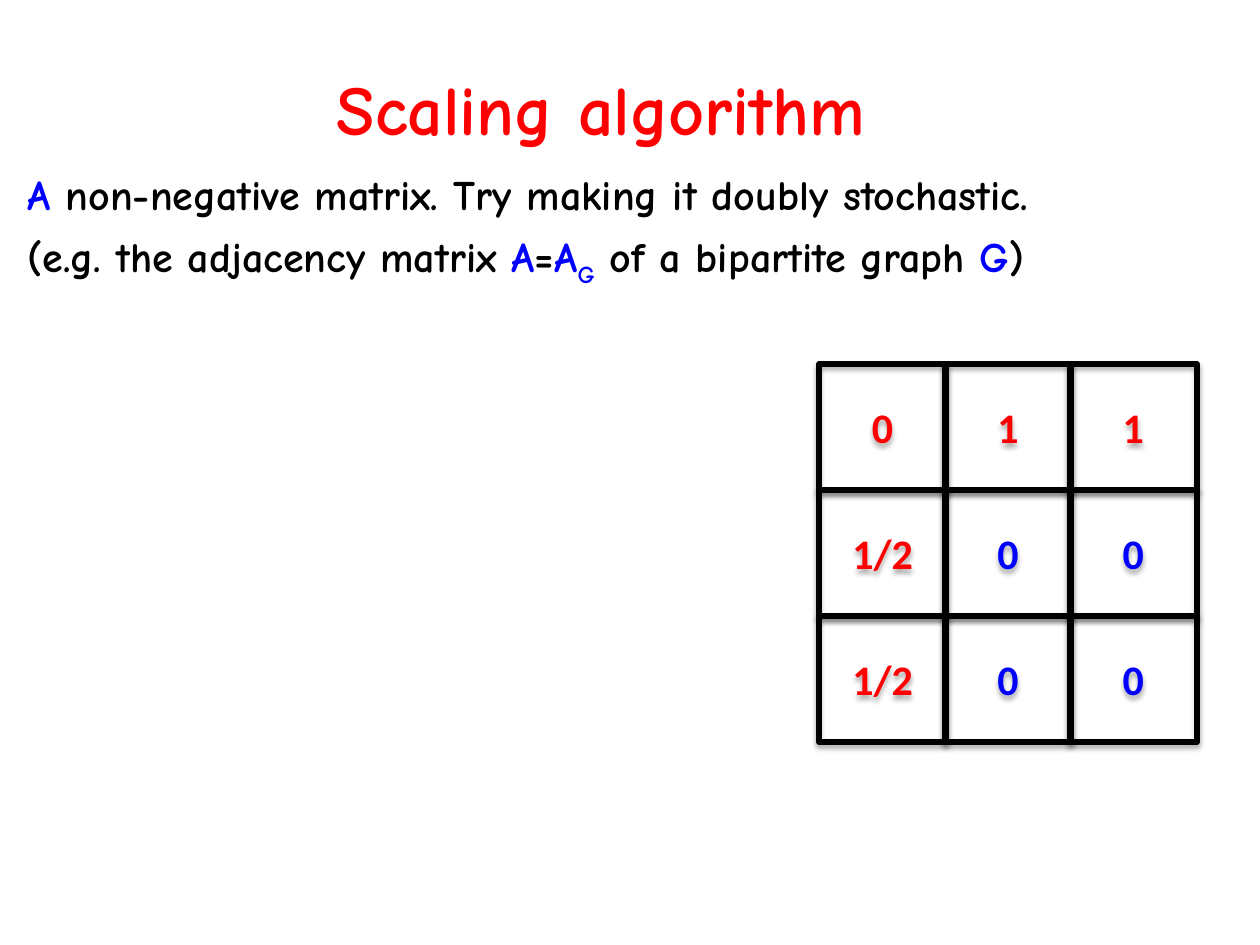
from pptx import Presentation
from pptx.dml.color import RGBColor
from pptx.enum.shapes import MSO_SHAPE
from pptx.enum.text import MSO_ANCHOR, PP_ALIGN
from pptx.util import Inches, Pt

COLORS = {"red": "FF0000", "blue": "0000FF", "black": "000000"}
TEXT_FONT, CELL_FONT = "Comic Neue", "Calibri"
GRID_LEFT, GRID_TOP, COL_STEP, ROW_STEP = 6.5, 2.89, 0.995, 1
CELL_W, CELL_H = 1.01, 1

MATRIX = [
    [("0", "red"), ("1", "red"), ("1", "red")],
    [("1/2", "red"), ("0", "blue"), ("0", "blue")],
    [("1/2", "red"), ("0", "blue"), ("0", "blue")],
]
TITLE = [[("Scaling algorithm ", "red")]]
BODY = [
    [("A", "blue"), (" non-negative matrix. Try making it doubly stochastic.", "black")],
    [("(e.g. the adjacency matrix ", "black"), ("A", "blue"), ("=", "black"),
     ("A", "blue"), ("G", "blue", "-25000"), (" of a bipartite graph ", "black"),
     ("G", "blue"), (")", "black")],
]


def color(name):
    """Return the named palette colour."""
    return RGBColor.from_string(COLORS[name])


def style_run(r, font, size, name):
    """Format a run as bold text in the given font, size and colour."""
    r.font.name, r.font.size, r.font.bold = font, Pt(size), True
    r.font.color.rgb = color(name)


def add_run(p, size, text, name, baseline=None):
    """Append a coloured run, optionally shifted off the baseline."""
    r = p.add_run()
    r.text = text
    style_run(r, TEXT_FONT, size, name)
    if baseline:
        r.font._element.set("baseline", baseline)


def add_text(s, box, lines, size, align, anchor, spacing):
    """Add a wrapped text box with one paragraph per line of runs."""
    tf = s.shapes.add_textbox(*map(Inches, box)).text_frame
    tf.word_wrap, tf.vertical_anchor = True, anchor
    for i, line in enumerate(lines):
        p = tf.add_paragraph() if i else tf.paragraphs[0]
        p.alignment, p.line_spacing = align, spacing
        for run in line:
            add_run(p, size, *run)


def add_cell(group, row, col, text, name):
    """Add one outlined matrix cell that keeps the theme shadow."""
    left, top = GRID_LEFT + col * COL_STEP, GRID_TOP + row * ROW_STEP
    sp = group.shapes.add_shape(
        MSO_SHAPE.RECTANGLE, *map(Inches, (left, top, CELL_W, CELL_H)))
    sp.fill.background()
    sp.line.color.rgb, sp.line.width = color("black"), Pt(3)
    tf = sp.text_frame
    tf.text, tf.vertical_anchor = text, MSO_ANCHOR.MIDDLE
    p = tf.paragraphs[0]
    p.alignment = PP_ALIGN.CENTER
    style_run(p.runs[0], CELL_FONT, 24, name)


def add_matrix(s):
    """Add the matrix as a group of cells, bottom row first."""
    group = s.shapes.add_group_shape()
    for row in reversed(range(len(MATRIX))):
        for col, (text, name) in enumerate(MATRIX[row]):
            add_cell(group, row, col, text, name)


def main():
    """Build the slide and save it."""
    prs = Presentation()
    prs.slide_width, prs.slide_height = Inches(10), Inches(7.5)
    s = prs.slides.add_slide(prs.slide_layouts[6])
    add_matrix(s)
    add_text(s, (0.62, 0.05, 8.5, 1.61), TITLE, 40,
             PP_ALIGN.CENTER, MSO_ANCHOR.MIDDLE, 1.0)
    add_text(s, (0.12, 1.21, 9.76, 1.54), BODY, 24,
             PP_ALIGN.LEFT, MSO_ANCHOR.TOP, 1.2)
    prs.save("out.pptx")


if __name__ == "__main__":
    main()
